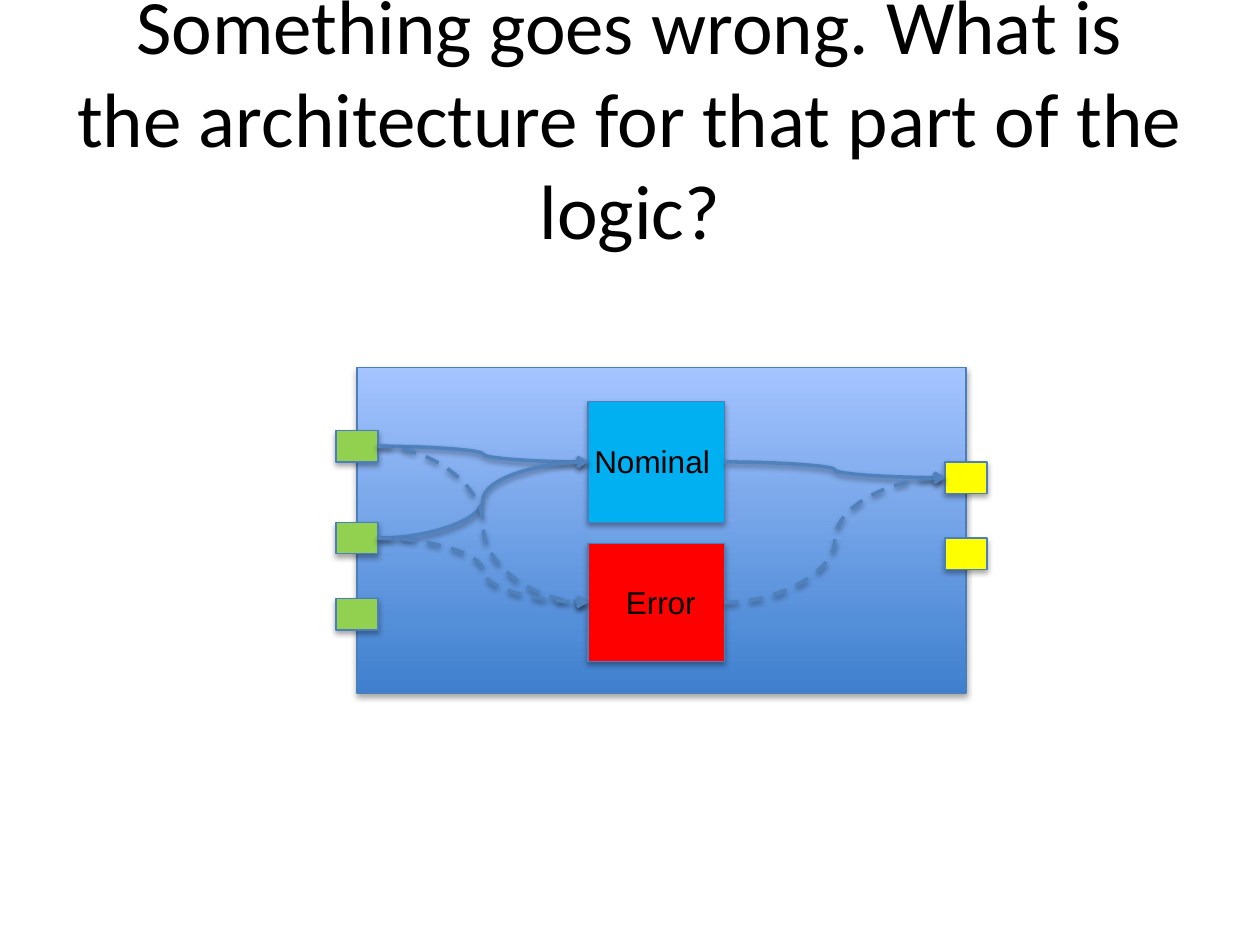
from dataclasses import dataclass

from pptx import Presentation
from pptx.dml.color import RGBColor
from pptx.enum.dml import MSO_LINE
from pptx.enum.shapes import MSO_CONNECTOR, MSO_SHAPE
from pptx.enum.text import MSO_ANCHOR, MSO_AUTO_SIZE, PP_ALIGN
from pptx.oxml import parse_xml
from pptx.oxml.ns import nsdecls
from pptx.util import Pt

RECTANGLE = MSO_SHAPE.RECTANGLE
CURVE = MSO_CONNECTOR.CURVE
DASH = MSO_LINE.DASH
MIDDLE = MSO_ANCHOR.MIDDLE
CENTER = PP_ALIGN.CENTER
NO_FIT = MSO_AUTO_SIZE.NONE
GROW = MSO_AUTO_SIZE.SHAPE_TO_FIT_TEXT
LEFT_SITE, RIGHT_SITE = 1, 3


@dataclass(frozen=True)
class Theme:
    """Colours, fonts and sizes of the slide."""
    text: str = "000000"
    outline: str = "4B7EBC"
    flow: str = "4F81BD"
    panel: tuple = ("3F80CE", "A4C4FF")
    input: str = "92D050"
    output: str = "FFFF00"
    nominal: str = "00B0F0"
    error: str = "FF0000"
    title_font: str = "Calibri"
    label_font: str = "Arial"
    title_size: float = 44
    label_size: float = 18
    outline_width: float = 0.75
    flow_width: float = 2


THEME = Theme()


def set_attributes(target, values):
    """Set each attribute of the target from a dict."""
    for name, value in values.items():
        setattr(target, name, value)


def place(left, top, width, height):
    """Turn a box in points into lengths."""
    return [Pt(length) for length in (left, top, width, height)]


def format_text(frame, text, font, size, **frame_values):
    """Write one paragraph and format it."""
    set_attributes(frame, frame_values)
    frame.text = text
    text_font = frame.paragraphs[0].runs[0].font
    set_attributes(text_font, {"name": font, "size": Pt(size)})
    text_font.color.rgb = RGBColor.from_string(THEME.text)


def format_line(shape, color, width):
    """Give a shape or connector a solid line."""
    shape.line.color.rgb = RGBColor.from_string(color)
    shape.line.width = Pt(width)


def add_shadow(shape, distance, opacity):
    """Drop a soft black shadow below a shape or connector."""
    shape._element.spPr.append(parse_xml(
        f'<a:effectLst {nsdecls("a")}><a:outerShdw blurRad="{Pt(3.15)}" '
        f'dist="{Pt(distance)}" dir="5400000" rotWithShape="0">'
        f'<a:srgbClr val="000000"><a:alpha val="{opacity * 1000}"/></a:srgbClr>'
        '</a:outerShdw></a:effectLst>'))


def add_title(slide, text):
    """Move the title placeholder and fill it."""
    title = slide.shapes.title
    names = ("left", "top", "width", "height")
    set_attributes(title, dict(zip(names, place(36, 21.6, 648, 90))))
    format_text(title.text_frame, text, THEME.title_font, THEME.title_size,
                word_wrap=True, auto_size=NO_FIT, vertical_anchor=MIDDLE)
    title.text_frame.paragraphs[0].alignment = CENTER


def add_box(slide, box, color):
    """Add an outlined rectangle, with a gradient for a pair of colours."""
    shape = slide.shapes.add_shape(RECTANGLE, *place(*box))
    if isinstance(color, tuple):
        shape.fill.gradient()
        shape.fill.gradient_angle = 90
        for stop, position, stop_color in zip(shape.fill.gradient_stops, (0, 1), color):
            stop.position = position
            stop.color.rgb = RGBColor.from_string(stop_color)
    else:
        shape.fill.solid()
        shape.fill.fore_color.rgb = RGBColor.from_string(color)
    format_line(shape, THEME.outline, THEME.outline_width)
    add_shadow(shape, 1.8, 35)
    return shape


def add_ports(slide, left, tops, color):
    """Add a column of equal ports."""
    return [add_box(slide, (left, top, 24, 18), color) for top in tops]


def add_flow(slide, source, target, dashed):
    """Join two boxes by a curved arrow, dashed for the error path."""
    flow = slide.shapes.add_connector(CURVE, 0, 0, 0, 0)
    flow.begin_connect(source, RIGHT_SITE)
    flow.end_connect(target, LEFT_SITE)
    format_line(flow, THEME.flow, THEME.flow_width)
    if dashed:
        flow.line.dash_style = DASH
    flow.line._get_or_add_ln().append(
        parse_xml(f'<a:tailEnd {nsdecls("a")} type="arrow"/>'))
    add_shadow(flow, 1.6, 38)


def add_label(slide, box, text):
    """Add an unwrapped label."""
    label = slide.shapes.add_textbox(*place(*box))
    format_text(label.text_frame, text, THEME.label_font, THEME.label_size,
                word_wrap=False, auto_size=GROW)


def main():
    """Build and save the slide."""
    presentation = Presentation()
    set_attributes(presentation, {"slide_width": Pt(720), "slide_height": Pt(540)})
    slide = presentation.slides.add_slide(presentation.slide_layouts[5])
    add_title(slide, "Something goes wrong. What is the architecture "
                     "for that part of the logic?")
    add_box(slide, (204, 210, 348, 186), THEME.panel)
    inputs = add_ports(slide, 192, (246, 298.5, 342), THEME.input)
    outputs = add_ports(slide, 540, (264, 307.5), THEME.output)
    nominal = add_box(slide, (336, 229.5, 78, 69), THEME.nominal)
    error = add_box(slide, (336, 310.5, 78, 67.5), THEME.error)
    for logic, dashed in ((nominal, False), (error, True)):
        for port in inputs[:2]:
            add_flow(slide, port, logic, dashed)
        add_flow(slide, logic, outputs[0], dashed)
    add_label(slide, (332.5, 249, 81.5, 29), "Nominal")
    add_label(slide, (350.5, 329.5, 54.5, 29), "Error")
    presentation.save("out.pptx")


if __name__ == "__main__":
    main()
